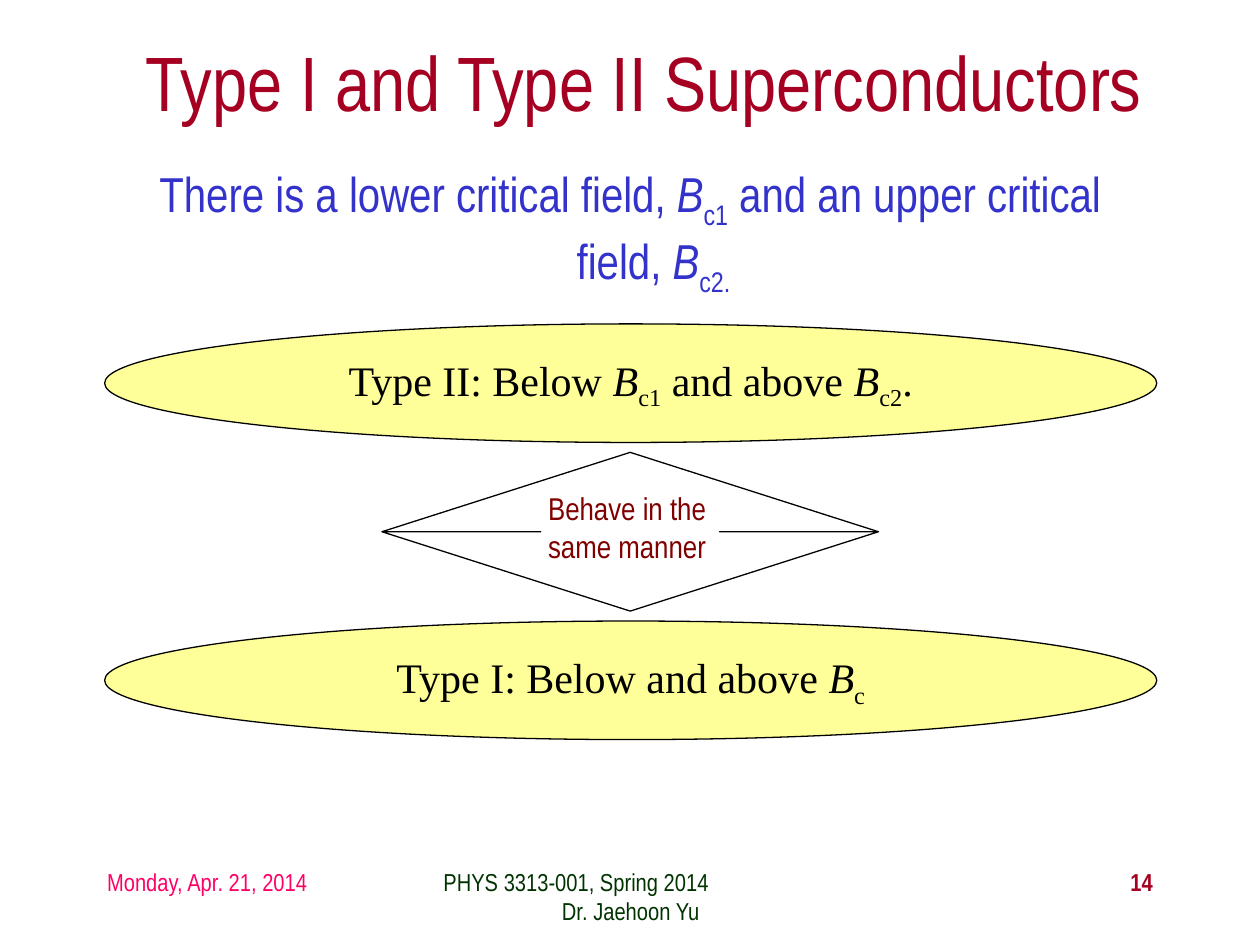
from pptx import Presentation
from pptx import util as u
from pptx.dml.color import RGBColor
from pptx.enum import shapes, text

SANS, SERIF = "Arial Narrow", "Times New Roman"
LEFT, MID, RIGHT = text.PP_ALIGN.LEFT, text.PP_ALIGN.CENTER, text.PP_ALIGN.RIGHT


def tint(code):
    return RGBColor.from_string(code)


def write(para, runs, size, color, font=SANS, align=LEFT, bold=False):
    """Fill a paragraph; runs are (text, style), style "i" italic, "sub" lowered."""
    para.alignment = align
    face = para.font
    face.name, face.size, face.bold = font, u.Pt(size), bold
    face.color.rgb = tint(color)
    for words, style in runs:
        run = para.add_run()
        run.text = words
        # Run properties are repeated so that they hold in every viewer
        f = run.font
        f.name, f.size, f.bold = font, u.Pt(size), bold
        f.color.rgb = tint(color)
        if style == "i":
            f.italic = True
        elif style == "sub":
            f._element.set("baseline", "-25000")


def add_box(slide, area, anchor=text.MSO_ANCHOR.TOP):
    frame = slide.shapes.add_textbox(*map(u.Cm, area)).text_frame
    frame.word_wrap = True
    frame.vertical_anchor = anchor
    return frame


def add_form(slide, kind, area, fill=None):
    form = slide.shapes.add_shape(kind, *map(u.Cm, area))
    form.shadow.inherit = False
    if fill:
        form.fill.solid()
        form.fill.fore_color.rgb = tint(fill)
    else:
        form.fill.background()
    form.line.color.rgb = tint("000000")
    form.line.width = u.Pt(0.75)
    return form


def add_oval(slide, top, runs):
    oval = add_form(slide, shapes.MSO_SHAPE.OVAL, (2.11, top, 21.21, 2.39), "FFFF99")
    frame = oval.text_frame
    frame.word_wrap = False
    frame.vertical_anchor = text.MSO_ANCHOR.MIDDLE
    write(frame.paragraphs[0], runs, 24, "000000", SERIF, MID)


def add_foot(slide, left, width, lines, color, bold=False):
    frame = add_box(slide, (left, 17.35, width, 1.27))
    for n, (words, align) in enumerate(lines):
        para = frame.add_paragraph() if n else frame.paragraphs[0]
        write(para, [(words, "")], 14, color, align=align, bold=bold)


def main():
    deck = Presentation()
    deck.slide_width, deck.slide_height = u.Cm(25.4), u.Cm(19.05)
    slide = deck.slides.add_slide(deck.slide_layouts[6])

    # Title
    title = add_box(slide, (1.27, 0.43, 23.44, 2.41), text.MSO_ANCHOR.MIDDLE)
    write(title.paragraphs[0], [("Type I and Type II Superconductors", "")],
          44, "A50021", align=MID)

    # Statement with hanging indent
    para = add_box(slide, (2.11, 3.18, 21.18, 13.77)).paragraphs[0]
    props = para._p.get_or_add_pPr()
    props.set("marL", str(u.Cm(0.95)))
    props.set("indent", str(u.Cm(-0.95)))
    write(para, [("There is a lower critical field, ", ""), ("B", "i"), ("c1", "sub"),
                 (" and an upper critical field, ", ""), ("B", "i"), ("c2.", "sub")],
          28, "3333CC", align=MID)

    # The two types
    add_oval(slide, 6.53, [("Type II: Below ", ""), ("B", "i"), ("c1", "sub"),
                           (" and above ", ""), ("B", "i"), ("c2", "sub"), (".", "")])
    add_oval(slide, 12.52, [("Type I: Below and above ", ""), ("B", "i"), ("c", "sub")])

    # Arrow between them and its label
    arrow = add_form(slide, shapes.MSO_SHAPE.UP_DOWN_ARROW, (7.7, 9.12, 10.01, 3.2))
    arrow.adjustments[0], arrow.adjustments[1] = 0.44, 0.36
    label = add_box(slide, (10.8, 9.73, 4.01, 1.78))
    write(label.paragraphs[0], [("Behave in the same manner", "")], 18, "800000")

    # Footer
    add_foot(slide, 1.91, 5.28, [("Monday, Apr. 21, 2014", LEFT)], "FF0066")
    add_foot(slide, 8.69, 8.05, [("PHYS 3313-001, Spring 2014", LEFT),
                                 ("Dr. Jaehoon Yu", MID)], "003300")
    add_foot(slide, 18.21, 5.28, [("14", RIGHT)], "A50021", bold=True)

    deck.save("out.pptx")


if __name__ == "__main__":
    main()
